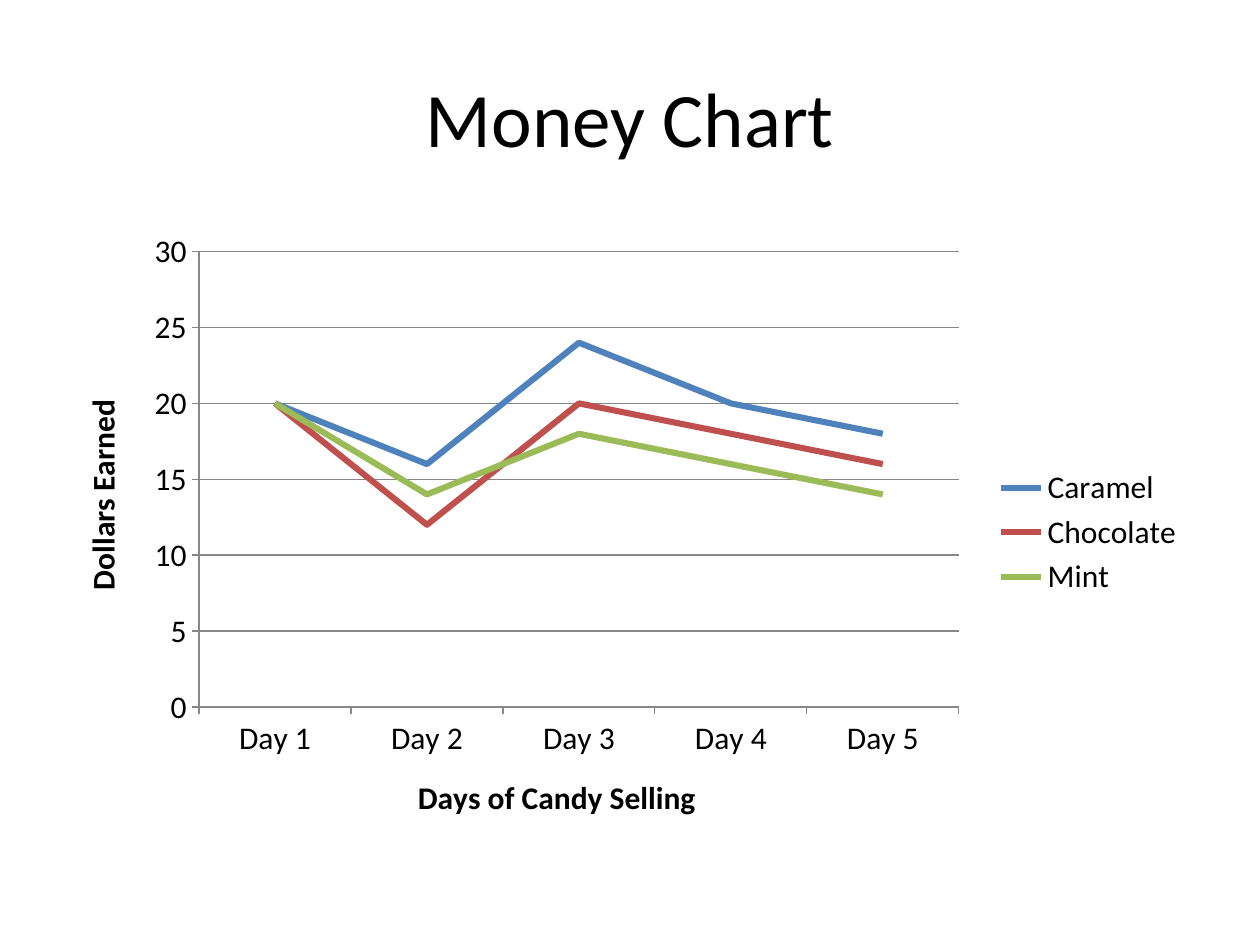
"""Build a slide with a line chart of candy earnings per day."""
import pptx
import pptx.chart.data
import pptx.dml.color
import pptx.enum.chart
import pptx.enum.text
import pptx.oxml
import pptx.oxml.ns
import pptx.util

Pt = pptx.util.Pt


def rgb(value):
    return pptx.dml.color.RGBColor.from_string(value)


def write(tf, text, size=18, bold=False, color="000000"):
    p = tf.paragraphs[0]
    p.alignment = pptx.enum.text.PP_ALIGN.CENTER
    r = p.add_run()
    r.text = text
    r.font.name = "Calibri"
    r.font.size = Pt(size)
    r.font.bold = bold
    r.font.color.rgb = rgb(color)


prs = pptx.Presentation()
prs.slide_width, prs.slide_height = Pt(720), Pt(540)
s = prs.slides.add_slide(prs.slide_layouts[5])

title = s.shapes.title
title.left, title.top, title.width, title.height = Pt(36), Pt(21.6), Pt(648), Pt(90)
title.text_frame.vertical_anchor = pptx.enum.text.MSO_ANCHOR.MIDDLE
write(title.text_frame, "Money Chart", size=44)

series = [
    ("Caramel", (20, 16, 24, 20, 18), "4F81BD"),
    ("Chocolate", (20, 12, 20, 18, 16), "C0504D"),
    ("Mint", (20, 14, 18, 16, 14), "9BBB59"),
]
data = pptx.chart.data.CategoryChartData()
data.categories = [f"Day {day}" for day in range(1, 6)]
for name, values, color in series:
    data.add_series(name, values)

chart = s.shapes.add_chart(
    pptx.enum.chart.XL_CHART_TYPE.LINE, Pt(36), Pt(126), Pt(648), Pt(356.4), data
).chart
chart.has_title = False
chart.font.name = "Calibri"
chart.font.size = Pt(18)
chart.font.color.rgb = rgb("000000")
chart.has_legend = True
chart.legend.position = pptx.enum.chart.XL_LEGEND_POSITION.RIGHT
chart.legend.include_in_layout = False

plot = chart.plots[0]
plot.vary_by_categories = False
for line, (name, values, color) in zip(plot.series, series):
    line.smooth = False
    line.marker.style = pptx.enum.chart.XL_MARKER_STYLE.NONE
    line.format.line.width = Pt(3.5)
    line.format.line.color.rgb = rgb(color)

cat_axis, val_axis = chart.category_axis, chart.value_axis
for axis, text in ((cat_axis, "Days of Candy Selling"), (val_axis, "Dollars Earned")):
    write(axis.axis_title.text_frame, text, bold=True)
    axis.major_tick_mark = pptx.enum.chart.XL_TICK_MARK.OUTSIDE
    axis.minor_tick_mark = pptx.enum.chart.XL_TICK_MARK.NONE
    axis.format.line.width = Pt(0.75)
    axis.format.line.color.rgb = rgb("878787")
cat_axis.has_major_gridlines = False
val_axis.has_major_gridlines = True
val_axis.major_gridlines.format.line.width = Pt(0.75)
val_axis.major_gridlines.format.line.color.rgb = rgb("878787")
val_axis.minimum_scale, val_axis.maximum_scale, val_axis.major_unit = 0, 30, 5

area = chart.element.find(".//" + pptx.oxml.ns.qn("c:plotArea"))
for old in area.findall(pptx.oxml.ns.qn("c:layout")):
    area.remove(old)
area.insert(0, pptx.oxml.parse_xml(
    f'<c:layout {pptx.oxml.ns.nsdecls("c")}><c:manualLayout>'
    '<c:layoutTarget val="inner"/><c:xMode val="edge"/><c:yMode val="edge"/>'
    '<c:x val="0.12"/><c:y val="0.05"/><c:w val="0.67"/><c:h val="0.73"/>'
    '</c:manualLayout></c:layout>'))

prs.save("out.pptx")
